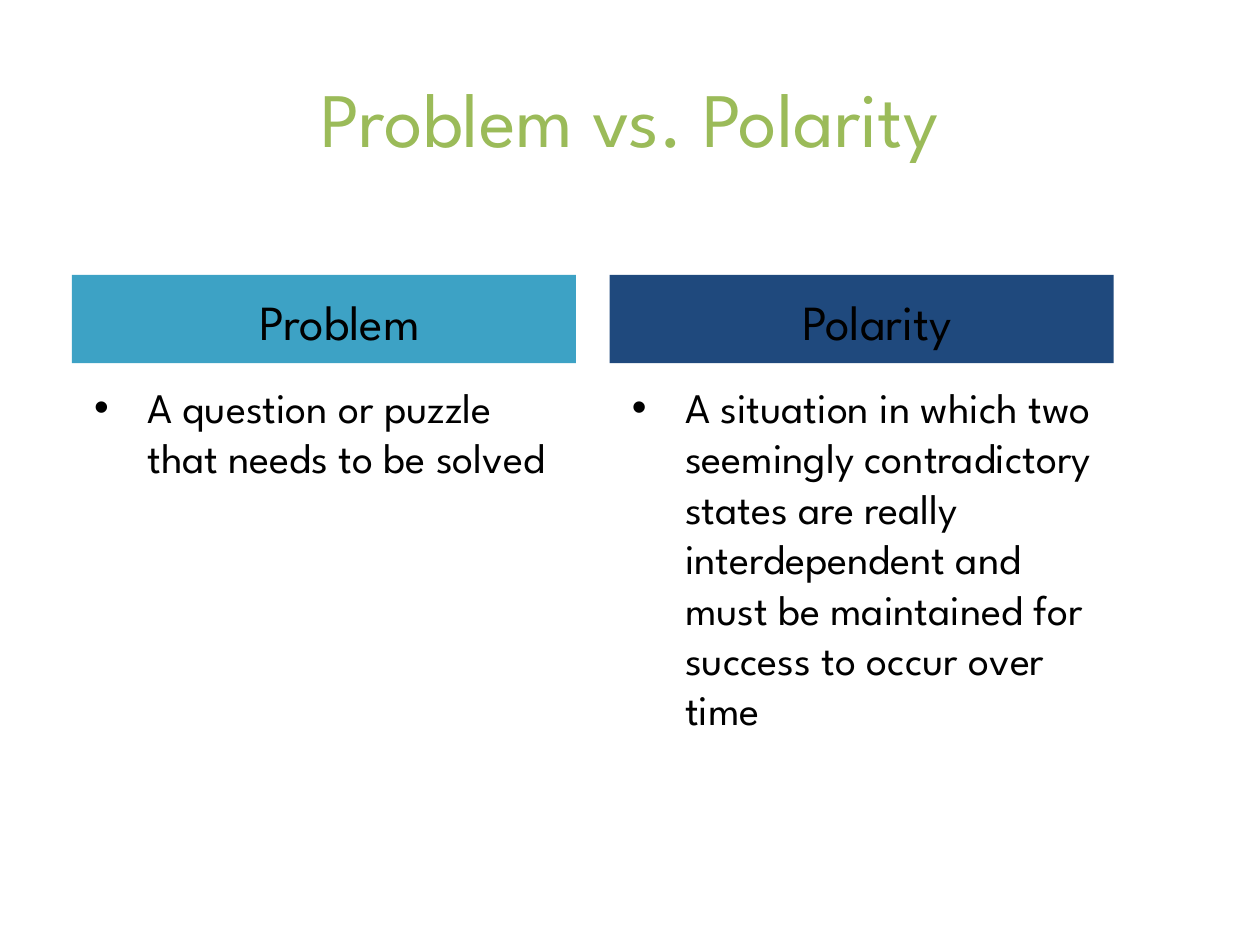
from dataclasses import dataclass

from lxml import etree
from pptx import Presentation
from pptx.dml.color import RGBColor
from pptx.enum.shapes import MSO_SHAPE
from pptx.enum.text import MSO_ANCHOR, PP_ALIGN
from pptx.oxml.ns import qn
from pptx.shapes.autoshape import Shape
from pptx.slide import Slide
from pptx.util import Cm, Length, Pt

RECTANGLE = MSO_SHAPE.RECTANGLE
TOP, MIDDLE, BOTTOM = MSO_ANCHOR.TOP, MSO_ANCHOR.MIDDLE, MSO_ANCHOR.BOTTOM
LEFT, CENTER = PP_ALIGN.LEFT, PP_ALIGN.CENTER

FONT = "League Spartan"
COLORS = {
    "title": "9BBB59",
    "text": "000000",
    "problem": "3DA2C5",
    "polarity": "1F497D",
}
INSET = Cm(0.25)
SPACE_BEFORE = Pt(4.8)
TEXT_MARGIN = Cm(1.27)
HEADING_INDENT = Cm(-0.64)
BULLET_INDENT = Cm(-1.07)

COLUMN_LEFT = Cm(1.45)
COLUMN_WIDTH = Cm(10.16)
COLUMN_STEP = Cm(10.84)
HEADING_TOP, HEADING_HEIGHT = Cm(5.54), Cm(1.78)
BODY_TOP, BODY_HEIGHT = Cm(7.44), Cm(10.21)


@dataclass(frozen=True)
class Column:
    heading: str
    body: str
    color: str


COLUMNS = (
    Column("Problem", "A question or puzzle that needs to be solved", "problem"),
    Column(
        "Polarity",
        "A situation in which two seemingly contradictory states are really "
        "interdependent and must be maintained for success to occur over time",
        "polarity",
    ),
)


def write_text(
    shape: Shape, text: str, size: int, color: str, anchor: MSO_ANCHOR, alignment: PP_ALIGN
) -> None:
    text_frame = shape.text_frame
    text_frame.text = text
    text_frame.word_wrap = True
    text_frame.vertical_anchor = anchor
    text_frame.margin_left = text_frame.margin_right = INSET
    text_frame.margin_top = text_frame.margin_bottom = INSET
    paragraph = text_frame.paragraphs[0]
    paragraph.alignment = alignment
    font = paragraph.runs[0].font
    font.name = FONT
    font.size = Pt(size)
    font.color.rgb = RGBColor.from_string(COLORS[color])


def indent_paragraph(shape: Shape, indent: Length, bullet: str = "") -> None:
    """Set the hanging indent and space before, with a bullet if one is given."""
    paragraph = shape.text_frame.paragraphs[0]
    paragraph.space_before = SPACE_BEFORE
    properties = paragraph._p.get_or_add_pPr()
    properties.set("marL", str(TEXT_MARGIN))
    properties.set("indent", str(indent))
    if bullet:
        etree.SubElement(properties, qn("a:buFont")).set("typeface", "Arial")
        etree.SubElement(properties, qn("a:buChar")).set("char", bullet)


def draw_title(slide: Slide) -> None:
    title = slide.shapes.add_textbox(Cm(1.27), Cm(0.76), Cm(22.86), Cm(3.18))
    write_text(title, "Problem vs. Polarity", 44, "title", MIDDLE, CENTER)


def draw_column(slide: Slide, column: Column, left: Length) -> None:
    body = slide.shapes.add_textbox(left, BODY_TOP, COLUMN_WIDTH, BODY_HEIGHT)
    write_text(body, column.body, 24, "text", TOP, LEFT)
    indent_paragraph(body, BULLET_INDENT, "•")

    heading = slide.shapes.add_shape(
        RECTANGLE, left, HEADING_TOP, COLUMN_WIDTH, HEADING_HEIGHT
    )
    heading.shadow.inherit = False
    heading.fill.solid()
    heading.fill.fore_color.rgb = RGBColor.from_string(COLORS[column.color])
    heading.line.fill.background()
    write_text(heading, column.heading, 28, "text", BOTTOM, CENTER)
    indent_paragraph(heading, HEADING_INDENT)


def main() -> None:
    presentation = Presentation()
    presentation.slide_width = Cm(25.4)
    presentation.slide_height = Cm(19.05)
    slide = presentation.slides.add_slide(presentation.slide_layouts[6])
    draw_title(slide)
    for index, column in enumerate(COLUMNS):
        draw_column(slide, column, COLUMN_LEFT + index * COLUMN_STEP)
    presentation.save("out.pptx")


if __name__ == "__main__":
    main()
